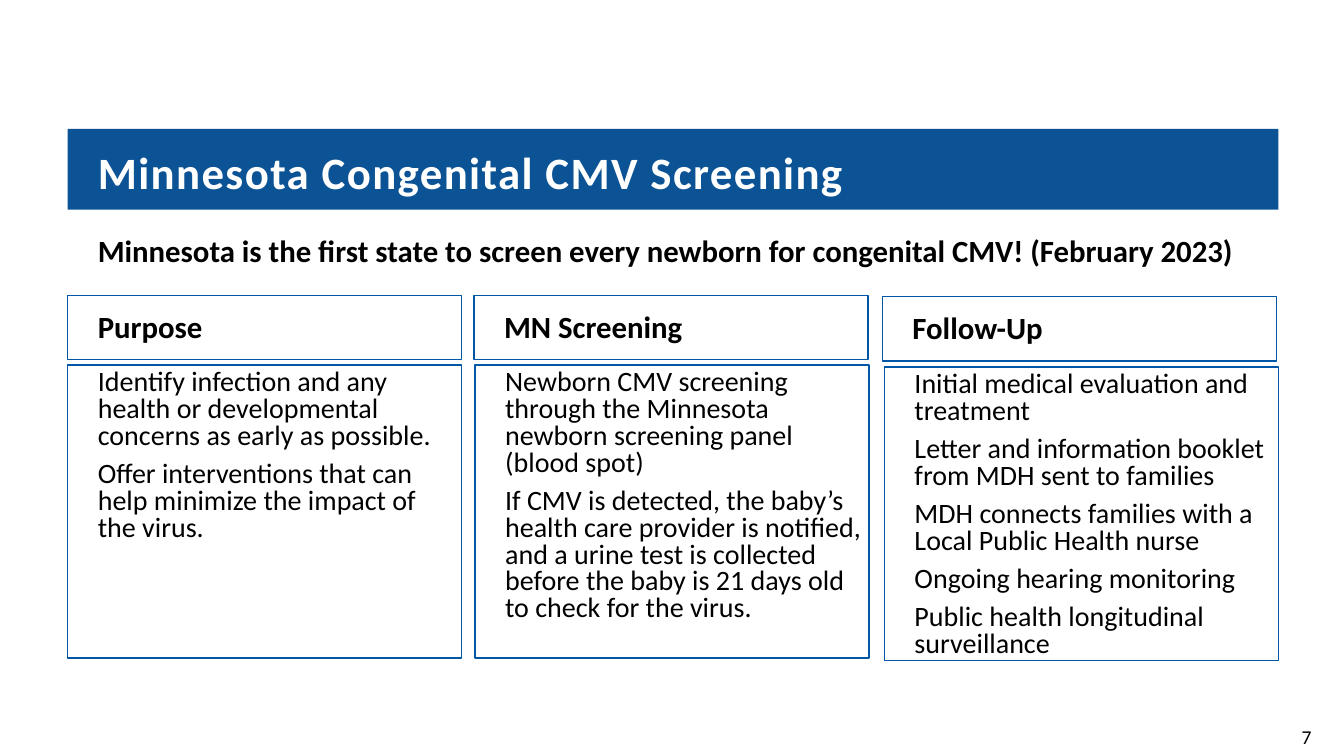
from dataclasses import dataclass

from pptx import Presentation
from pptx.dml.color import RGBColor
from pptx.enum.shapes import MSO_SHAPE
from pptx.enum.text import MSO_ANCHOR, PP_ALIGN
from pptx.util import Inches, Pt


@dataclass(frozen=True)
class Theme:
    """Colours, font and type sizes of the slide."""
    font: str = "Calibri"
    white: RGBColor = RGBColor(0xFF, 0xFF, 0xFF)
    black: RGBColor = RGBColor(0, 0, 0)
    band: RGBColor = RGBColor(0x0B, 0x53, 0x94)
    edge: RGBColor = RGBColor(0x01, 0x56, 0xA6)
    title: int = 32
    head: int = 22
    body: int = 20
    page: int = 14


THEME = Theme()
CARDS = [
    (0.67, 0.67, 2.93, 3.62, "Purpose", [
        "Identify infection and any health or developmental concerns as early as possible.",
        "Offer interventions that can help minimize the impact of the virus.",
    ]),
    (4.7, 4.71, 2.93, 3.62, "MN Screening", [
        "Newborn CMV screening through the Minnesota newborn screening panel (blood spot)",
        "If CMV is detected, the baby’s health care provider is notified, and a urine test "
        "is collected before the baby is 21 days old to check for the virus.",
    ]),
    (8.75, 8.77, 2.94, 3.64, "Follow-Up", [
        "Initial medical evaluation and treatment",
        "Letter and information booklet from MDH sent to families",
        "MDH connects families with a Local Public Health nurse",
        "Ongoing hearing monitoring",
        "Public health longitudinal surveillance",
    ]),
]


def add_box(slide, box, fill=None, edge=None, width=1):
    """Add a plain rectangle with optional fill and edge."""
    shape = slide.shapes.add_shape(MSO_SHAPE.RECTANGLE, *map(Inches, box))
    shape.shadow.inherit = False
    if fill is None:
        shape.fill.background()
    else:
        shape.fill.solid()
        shape.fill.fore_color.rgb = fill
    if edge is None:
        shape.line.fill.background()
    else:
        shape.line.color.rgb = edge
        shape.line.width = Pt(width)
    return shape


def write(shape, lines, size, bold=False, color=THEME.black, lead=0.8, gap=0,
          anchor=MSO_ANCHOR.MIDDLE, align=PP_ALIGN.LEFT,
          pad=(0.3, 0.05, 0.05, 0.05)):
    """Fill a shape with paragraphs of one style."""
    frame = shape.text_frame
    frame.word_wrap = True
    frame.vertical_anchor = anchor
    (frame.margin_left, frame.margin_top,
     frame.margin_right, frame.margin_bottom) = map(Inches, pad)
    frame.text = "\n".join(lines)
    for para in frame.paragraphs:
        para.alignment = align
        para.line_spacing = lead
        para.space_before = para.space_after = Pt(gap)
        para.font.name = THEME.font
        para.font.size = Pt(size)
        para.font.bold = bold
        para.font.color.rgb = color


def add_title(slide, box, text):
    """Add the title band with spaced letters."""
    shape = add_box(slide, box, THEME.band)
    write(shape, [text], THEME.title, True, THEME.white, pad=(0.3, 0.2, 0.3, 0.05))
    run = shape.text_frame.paragraphs[0].runs[0]
    run.font._element.set("spc", "100")


def add_lead(slide, box, text):
    """Add the bold statement under the title."""
    shape = slide.shapes.add_textbox(*map(Inches, box))
    write(shape, [text], THEME.head, True, gap=4)


def add_card(slide, head, body, name, lines):
    """Add a framed heading and the framed text below it."""
    write(add_box(slide, head, edge=THEME.edge), [name], THEME.head, True, lead=Pt(24))
    write(add_box(slide, body, edge=THEME.edge), lines, THEME.body, gap=4,
          anchor=MSO_ANCHOR.TOP)


def add_page(slide, box, text):
    """Add the page number."""
    shape = add_box(slide, box, edge=THEME.white, width=0.75)
    write(shape, [text], THEME.page, lead=1.0, anchor=MSO_ANCHOR.TOP,
          align=PP_ALIGN.CENTER, pad=(0.1, 0.05, 0.1, 0.05))


def main():
    """Build and save the slide."""
    deck = Presentation()
    deck.slide_width, deck.slide_height = Inches(13.33), Inches(7.5)
    slide = deck.slides.add_slide(deck.slide_layouts[6])
    add_page(slide, (12.63, 7.14, 0.66, 0.34), "7")
    add_title(slide, (0.67, 1.28, 12.01, 0.8), "Minnesota Congenital CMV Screening")
    add_lead(slide, (0.67, 2.18, 11.99, 0.68),
             "Minnesota is the first state to screen every newborn "
             "for congenital CMV! (February 2023)")
    for left, inner, top, below, name, lines in CARDS:
        add_card(slide, (left, top, 3.91, 0.64), (inner, below, 3.91, 2.91), name, lines)
    deck.save("out.pptx")


if __name__ == "__main__":
    main()
